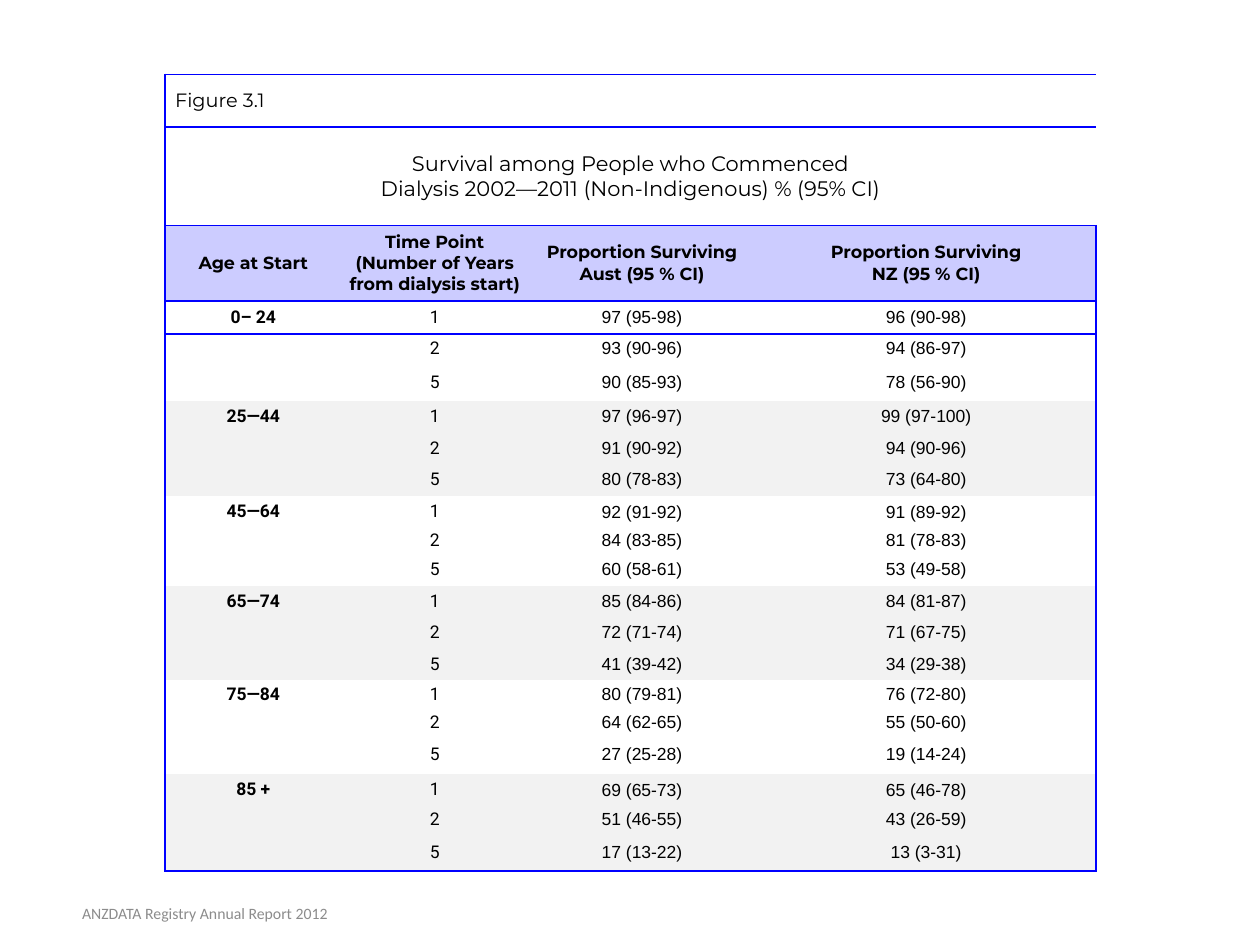
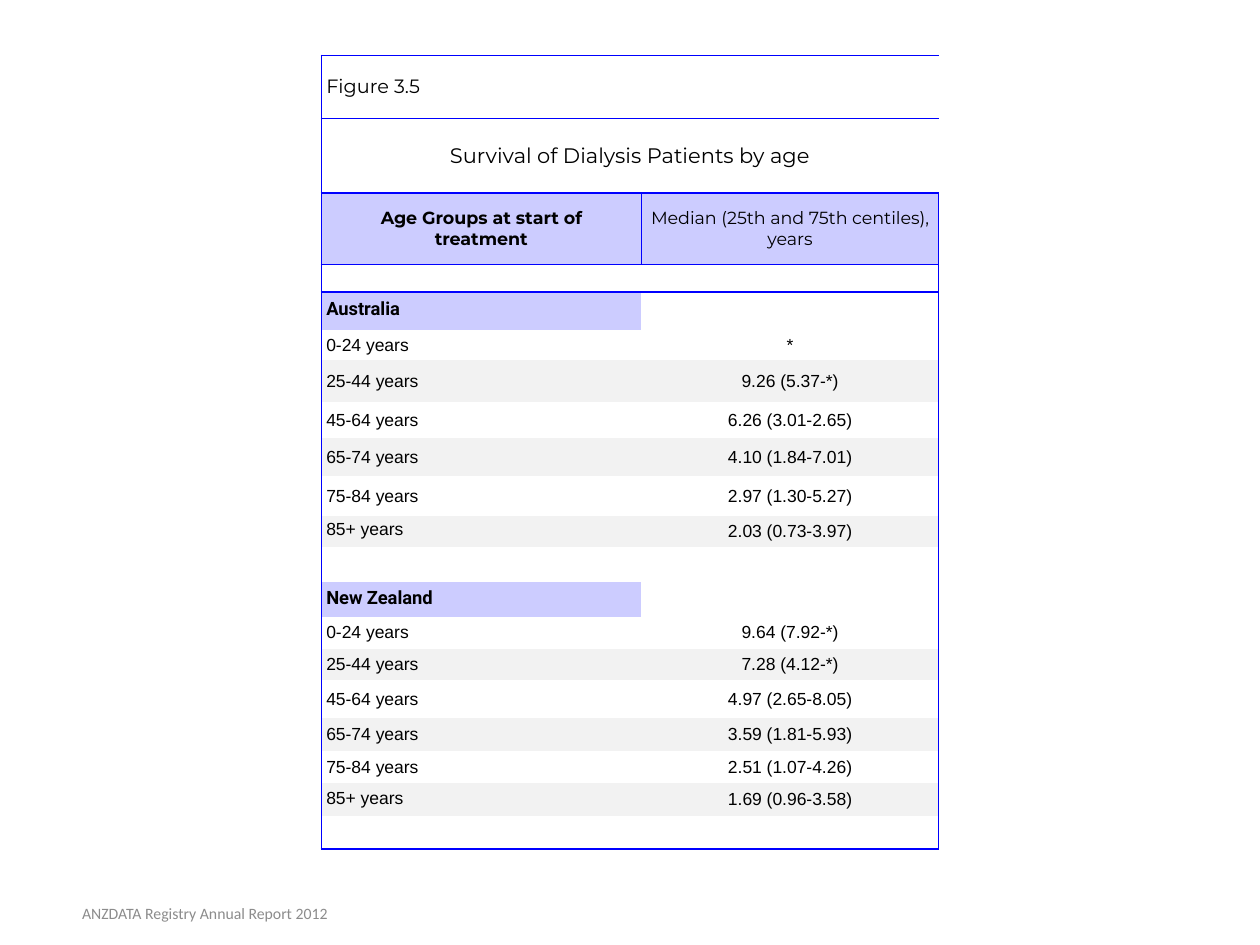
import pptx
import pptx.util
import pptx.dml.color
import pptx.enum.text
import pptx.oxml.ns
from dataclasses import dataclass
from lxml import etree

Inches = pptx.util.Inches
Pt = pptx.util.Pt
RGB = pptx.dml.color.RGBColor.from_string
qn = pptx.oxml.ns.qn
ALIGN = pptx.enum.text.PP_ALIGN
MIDDLE = pptx.enum.text.MSO_ANCHOR.MIDDLE


# Colours, fonts and sizes
@dataclass
class Theme:
    ink: str = "000000"
    rule: str = "0000FF"
    lilac: str = "CCCCFF"
    grey: str = "F2F2F2"
    quiet: str = "8C8C8C"
    head: str = "Montserrat"
    label: str = "Roboto"
    data: str = "Arial"
    foot: str = "Calibri"
    tag: float = 11
    title: float = 12
    group: float = 10.5
    body: float = 10
    note: float = 9


look = Theme()
NO_STYLE = "{2D5ABB26-0587-4C30-8999-92F81FD0307C}"


def write(box, text, size, font, bold=False, align=ALIGN.CENTER, color=look.ink, space=None):
    box.text_frame.text = text
    for par in box.text_frame.paragraphs:
        par.alignment = align
        par.line_spacing = space
        for run in par.runs:
            run.font.size = Pt(size)
            run.font.name = font
            run.font.bold = bold
            run.font.color.rgb = RGB(color)


def grid(slide, left, top, cols, rows, greys, split=False):
    """Add a ruled table with a tag row, a title row and a lilac header row."""
    table = slide.shapes.add_table(
        len(rows), len(cols), Inches(left), Inches(top),
        Inches(sum(cols)), Inches(sum(rows))).table
    table._tbl.tblPr.find(qn("a:tableStyleId")).text = NO_STYLE
    table.first_row = table.horz_banding = False
    for col, width in zip(table.columns, cols):
        col.width = Inches(width)
    for y, height in enumerate(rows):
        table.rows[y].height = Inches(height)
        for x in range(len(cols)):
            cell = table.cell(y, x)
            cell.vertical_anchor = MIDDLE
            cell.margin_left = cell.margin_right = Inches(0.04)
            cell.margin_top = cell.margin_bottom = Inches(0.02)
            # Blank cells keep small type so that rows stay low
            par = cell.text_frame.paragraphs[0]._p
            etree.SubElement(par, qn("a:endParaRPr"), sz=str(look.body * 100))
            # Borders
            sides = {
                "L": x == 0 or (split and y == 2),
                "R": x == len(cols) - 1 or (split and y == 2),
                "T": y <= 3,
                "B": y <= 2 or y == len(rows) - 1,
            }
            props = cell._tc.get_or_add_tcPr()
            for side, ruled in sides.items():
                if ruled:
                    line = etree.SubElement(props, qn("a:ln" + side), w=str(Pt(1)))
                    solid = etree.SubElement(line, qn("a:solidFill"))
                    etree.SubElement(solid, qn("a:srgbClr"), val=look.rule)
            # Fill
            if y == 2 or y in greys:
                cell.fill.solid()
                cell.fill.fore_color.rgb = RGB(look.lilac if y == 2 else look.grey)
            else:
                cell.fill.background()
    for y in (0, 1):
        table.cell(y, 0).merge(table.cell(y, len(cols) - 1))
    return table


deck = pptx.Presentation()
deck.slide_width, deck.slide_height = Inches(10), Inches(7.5)
blank = deck.slide_layouts[6]

# Slide 1: survival by age and time point
ages = [
    ("0– 24", ["97 (95-98)", "93 (90-96)", "90 (85-93)"],
     ["96 (90-98)", "94 (86-97)", "78 (56-90)"]),
    ("25—44", ["97 (96-97)", "91 (90-92)", "80 (78-83)"],
     ["99 (97-100)", "94 (90-96)", "73 (64-80)"]),
    ("45—64", ["92 (91-92)", "84 (83-85)", "60 (58-61)"],
     ["91 (89-92)", "81 (78-83)", "53 (49-58)"]),
    ("65—74", ["85 (84-86)", "72 (71-74)", "41 (39-42)"],
     ["84 (81-87)", "71 (67-75)", "34 (29-38)"]),
    ("75—84", ["80 (79-81)", "64 (62-65)", "27 (25-28)"],
     ["76 (72-80)", "55 (50-60)", "19 (14-24)"]),
    ("85 +", ["69 (65-73)", "51 (46-55)", "17 (13-22)"],
     ["65 (46-78)", "43 (26-59)", "13 (3-31)"]),
]
heads = ["Age at Start", "Time Point\n(Number of Years from dialysis start)",
         "Proportion Surviving Aust (95 % CI)", "Proportion Surviving\nNZ (95 % CI)"]
rows = [0.42, 0.78, 0.6, 0.26, 0.24, 0.29, 0.26, 0.24, 0.26, 0.25, 0.2,
        0.25, 0.25, 0.25, 0.25, 0.23, 0.2, 0.31, 0.25, 0.22, 0.3]
greys = [y for y in range(3, len(rows)) if (y - 3) // 3 % 2]
first = deck.slides.add_slide(blank)
table = grid(first, 1.31, 0.59, [1.4, 1.48, 1.81, 2.7], rows, greys)
write(table.cell(0, 0), "Figure 3.1", look.tag, look.head, align=ALIGN.LEFT)
table.cell(0, 0).margin_left = Inches(0.08)
write(table.cell(1, 0), "Survival among People who Commenced\n"
      "Dialysis 2002—2011 (Non-Indigenous) % (95% CI)", look.title, look.head)
for x, head in enumerate(heads):
    write(table.cell(2, x), head, look.body, look.head, bold=True)
for i, (age, aust, nz) in enumerate(ages):
    top = 3 + 3 * i
    write(table.cell(top, 0), age, look.body, look.label, bold=True)
    for y, (year, *rates) in enumerate(zip("125", aust, nz), top):
        write(table.cell(y, 1), year, look.body, look.label)
        for x, rate in enumerate(rates, 2):
            write(table.cell(y, x), rate, look.body, look.data)

# Slide 2: median survival by age and country
bands = ["0-24 years", "25-44 years", "45-64 years",
         "65-74 years", "75-84 years", "85+ years"]
lands = {
    "Australia": ["*", "9.26 (5.37-*)", "6.26 (3.01-2.65)",
                  "4.10 (1.84-7.01)", "2.97 (1.30-5.27)", "2.03 (0.73-3.97)"],
    "New Zealand": ["9.64 (7.92-*)", "7.28 (4.12-*)", "4.97 (2.65-8.05)",
                    "3.59 (1.81-5.93)", "2.51 (1.07-4.26)", "1.69 (0.96-3.58)"],
}
rows = [0.5, 0.59, 0.57, 0.22, 0.3, 0.24, 0.33, 0.29, 0.3, 0.32,
        0.24, 0.28, 0.28, 0.25, 0.25, 0.3, 0.26, 0.26, 0.26, 0.26]
greys = [top + step for top in (4, 12) for step in (2, 4, 6)]
second = deck.slides.add_slide(blank)
table = grid(second, 2.55, 0.44, [2.54, 2.36], rows, greys, split=True)
write(table.cell(0, 0), "Figure 3.5", look.tag, look.head, align=ALIGN.LEFT)
write(table.cell(1, 0), "Survival of Dialysis Patients by age", look.title, look.head)
write(table.cell(2, 0), "Age Groups at start of\vtreatment", look.body, look.head, bold=True)
write(table.cell(2, 1), "Median (25th and 75th centiles), years", look.body, look.head)
for i, (land, spans) in enumerate(lands.items()):
    top = 4 + 8 * i
    name = table.cell(top, 0)
    write(name, land, look.group, look.label, bold=True, align=ALIGN.LEFT, space=0.75)
    name.fill.solid()
    name.fill.fore_color.rgb = RGB(look.lilac)
    for y, (band, span) in enumerate(zip(bands, spans), top + 1):
        tight = 0.75 if band == bands[-1] else None
        write(table.cell(y, 0), band, look.body, look.data, align=ALIGN.LEFT, space=tight)
        write(table.cell(y, 1), span, look.body, look.data)

# Footer on both slides
for slide in (first, second):
    foot = slide.shapes.add_textbox(Inches(0.04), Inches(7.05), Inches(3.17), Inches(0.4))
    foot.text_frame.word_wrap = True
    foot.text_frame.vertical_anchor = MIDDLE
    write(foot, "ANZDATA Registry Annual Report 2012", look.note, look.foot, color=look.quiet)

deck.save("out.pptx")
